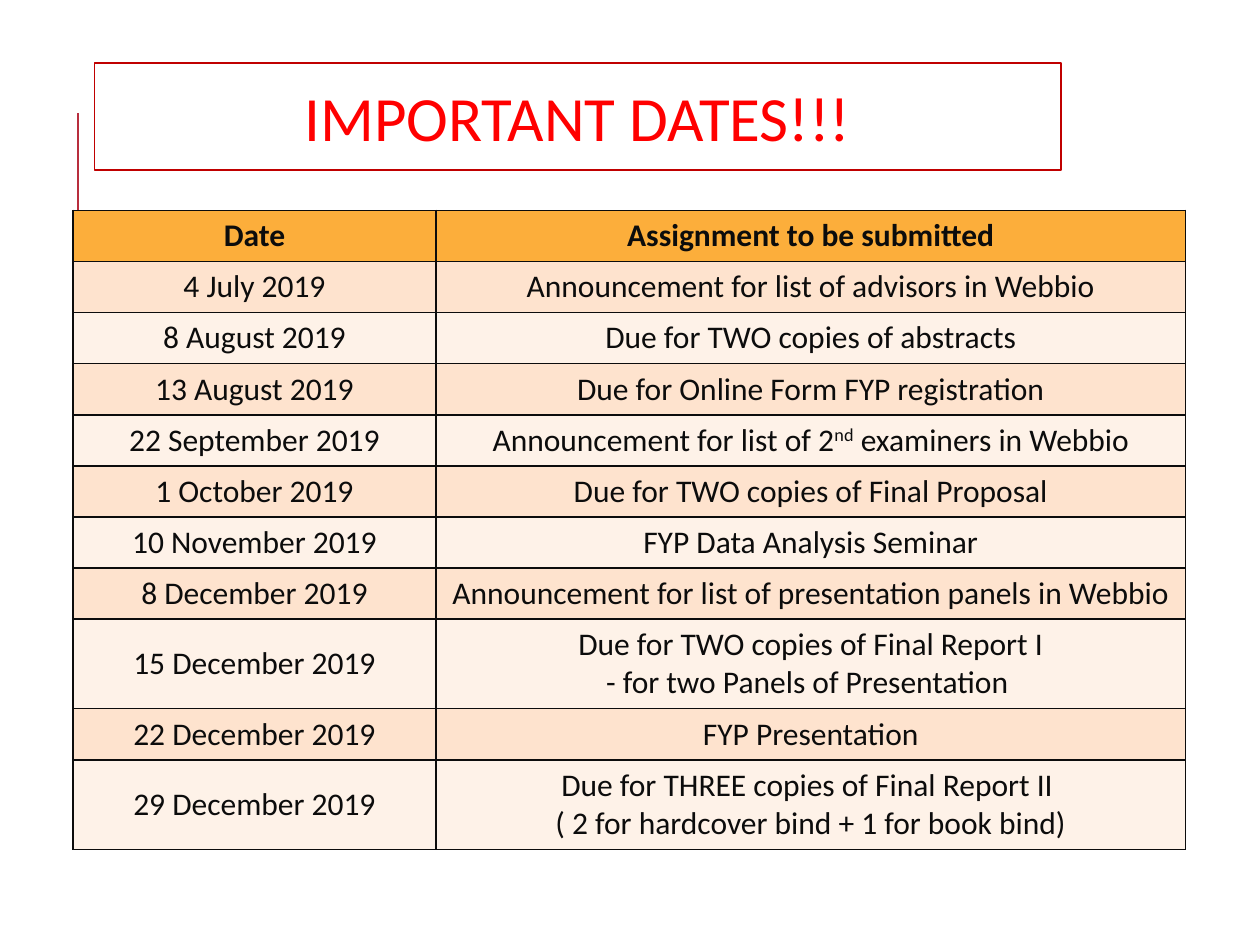
from lxml.etree import SubElement
from pptx import Presentation
from pptx.dml.color import RGBColor
from pptx.enum.shapes import MSO_CONNECTOR, MSO_SHAPE
from pptx.enum.text import MSO_ANCHOR, PP_ALIGN
from pptx.oxml.ns import qn
from pptx.util import Inches, Pt

FONT = "Calibri"
TITLE = "IMPORTANT DATES!!!"
HEADER = ("Date", "Assignment to be submitted")
# Each assignment is a list of lines; "^" sets off superscript text.
DATES = [
    ("4 July 2019", ["Announcement for list of advisors in Webbio"]),
    ("8 August 2019", ["Due for TWO copies of abstracts"]),
    ("13 August 2019", ["Due for Online Form FYP registration"]),
    ("22 September 2019", ["Announcement for list of 2^nd^ examiners in Webbio"]),
    ("1 October 2019", ["Due for TWO copies of Final Proposal"]),
    ("10 November 2019", ["FYP Data Analysis Seminar"]),
    ("8 December 2019", ["Announcement for list of presentation panels in Webbio"]),
    ("15 December 2019", ["Due for TWO copies of Final Report I",
                          "- for two Panels of Presentation "]),
    ("22 December 2019", ["FYP Presentation"]),
    ("29 December 2019", ["Due for THREE copies of Final Report II ",
                          "( 2 for hardcover bind + 1 for book bind)"]),
]
INK, RED, TITLE_BORDER, ACCENT = "0C0C0C", "FF0000", "C00000", "B82E3E"
HEADER_FILL, BANDS = "FCAE3B", ("FEE3CE", "FEF2E8")
COL_WIDTHS = (2.88, 5.95)
ROW_H, LINE_H = 0.4, 0.31
TABLE_X, TABLE_Y = 0.58, 1.67


def rgb(color):
    return RGBColor.from_string(color)


def write(tf, lines, size, color, bold=False):
    for i, line in enumerate(lines):
        p = tf.paragraphs[0] if i == 0 else tf.add_paragraph()
        p.alignment = PP_ALIGN.CENTER
        for j, text in enumerate(line.split("^")):
            r = p.add_run()
            r.text = text
            r.font.name, r.font.size, r.font.bold = FONT, Pt(size), bold
            r.font.color.rgb = rgb(color)
            if j % 2:
                r.font._element.set("baseline", "30000")


def add_borders(cell):
    """Draw all four edges; they must come before the fill in tcPr."""
    tcPr = cell._tc.get_or_add_tcPr()
    for i, side in enumerate(("lnL", "lnR", "lnT", "lnB")):
        ln = SubElement(tcPr, qn(f"a:{side}"), w=str(Pt(1)))
        fill = SubElement(ln, qn("a:solidFill"))
        SubElement(fill, qn("a:srgbClr"), val=INK)
        tcPr.insert(i, ln)


def add_accent_line(s):
    line = s.shapes.add_connector(MSO_CONNECTOR.STRAIGHT, Inches(0.62), Inches(1.9),
                                  Inches(0.62), Inches(0.9))
    line.line.color.rgb = rgb(ACCENT)
    line.line.width = Pt(1.5)
    SubElement(line._element.spPr, qn("a:effectLst"))


def add_title(s):
    sp = s.shapes.add_shape(MSO_SHAPE.RECTANGLE, Inches(0.75), Inches(0.5),
                            Inches(7.67), Inches(0.85))
    sp.shadow.inherit = False
    sp.fill.background()
    sp.line.color.rgb = rgb(TITLE_BORDER)
    sp.line.width = Pt(1)
    tf = sp.text_frame
    tf.word_wrap = True
    tf.vertical_anchor = MSO_ANCHOR.MIDDLE
    write(tf, [TITLE], 36, RED)


def add_dates(s):
    rows = [(HEADER[0], [HEADER[1]])] + DATES
    heights = [ROW_H + LINE_H * (len(lines) - 1) for _, lines in rows]
    table = s.shapes.add_table(len(rows), len(COL_WIDTHS), Inches(TABLE_X), Inches(TABLE_Y),
                               Inches(sum(COL_WIDTHS)), Inches(sum(heights))).table
    for col, width in zip(table.columns, COL_WIDTHS):
        col.width = Inches(width)
    for i, (date, lines) in enumerate(rows):
        table.rows[i].height = Inches(heights[i])
        for cell, content in zip(table.rows[i].cells, ([date], lines)):
            cell.fill.solid()
            cell.fill.fore_color.rgb = rgb(BANDS[(i - 1) % 2] if i else HEADER_FILL)
            cell.vertical_anchor = MSO_ANCHOR.MIDDLE if i else MSO_ANCHOR.TOP
            add_borders(cell)
            write(cell.text_frame, content, 18, INK, bold=i == 0)


def main():
    prs = Presentation()
    prs.slide_width, prs.slide_height = Inches(10), Inches(7.5)
    s = prs.slides.add_slide(prs.slide_layouts[6])
    add_accent_line(s)
    add_title(s)
    add_dates(s)
    prs.save("out.pptx")


if __name__ == "__main__":
    main()
